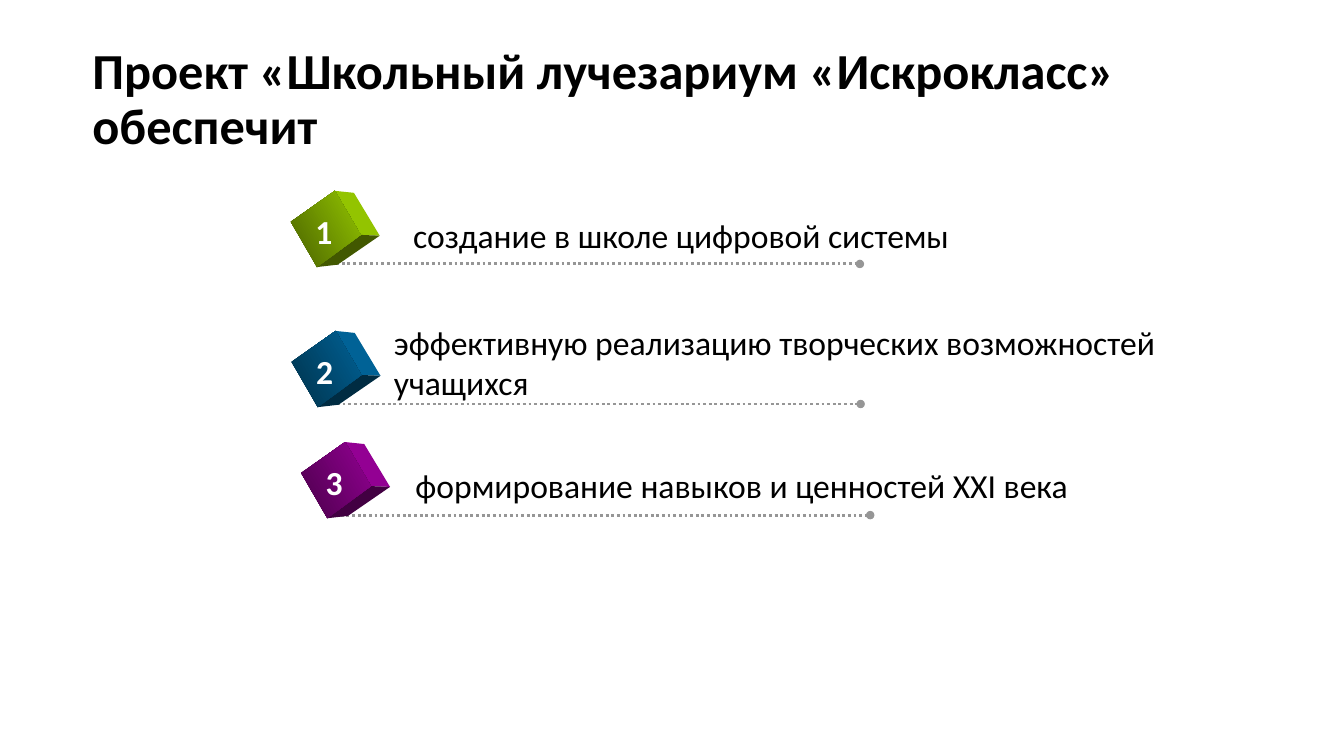
from lxml.etree import SubElement
from pptx import Presentation
from pptx.dml.color import RGBColor
from pptx.enum.dml import MSO_LINE
from pptx.enum.shapes import MSO_CONNECTOR
from pptx.enum.text import MSO_ANCHOR
from pptx.oxml.ns import qn
from pptx.util import Cm, Pt

COLORS = {
    "text": "000000",
    "number": "FFFFFF",
    "rule": "969696",
    "green": "93C400",
    "green dark": "4A6300",
    "green base": "425800",
    "blue": "006296",
    "blue dark": "00324B",
    "blue base": "002C42",
    "purple": "930093",
    "purple dark": "4A004A",
    "purple base": "420042",
}

# Cube corners in hundredths of a centimetre
LEFT, TOP, TOP_RIGHT, RIGHT = (0, 78), (111, 0), (159, 5), (224, 113)
BOTTOM_RIGHT, BOTTOM, INNER = (118, 186), (66, 192), (176, 111)
SIDE_FACE = (TOP, TOP_RIGHT, RIGHT, INNER)
BASE_FACE = (BOTTOM, INNER, RIGHT, BOTTOM_RIGHT)
FRONT_FACE = (LEFT, TOP, INNER, BOTTOM)

# Cube left and top, colour, caption, caption box relative to the cube, wrapping
GOALS = [
    (7.33, 4.81, "green", "создание в школе цифровой системы",
     (2.83, 0.47, 14.15, 1.3), False),
    (7.35, 8.34, "blue", "эффективную реализацию творческих возможностей учащихся",
     (2.33, -0.36, 19.69, 2.31), True),
    (7.59, 11.14, "purple", "формирование навыков и ценностей XXI века",
     (2.63, 0.44, 17.09, 1.3), False),
]


def rgb(name):
    return RGBColor.from_string(COLORS[name])


def add_text(page, text, box, size=24, color="text", bold=False, wrap=False, spacing=None):
    left, top, width, height = box
    frame = page.shapes.add_textbox(Cm(left), Cm(top), Cm(width), Cm(height)).text_frame
    frame.word_wrap = wrap
    frame.vertical_anchor = MSO_ANCHOR.TOP
    para = frame.paragraphs[0]
    para.line_spacing = spacing
    span = para.add_run()
    span.text = text
    span.font.name = "Calibri"
    span.font.size = Pt(size)
    span.font.bold = bold
    span.font.color.rgb = rgb(color)


def add_rule(page, left, top, width):
    """Dotted line that ends in a round dot."""
    rule = page.shapes.add_connector(
        MSO_CONNECTOR.STRAIGHT, Cm(left), Cm(top), Cm(left + width), Cm(top))
    rule.line.color.rgb = rgb("rule")
    rule.line.width = Pt(2)
    rule.line.dash_style = MSO_LINE.ROUND_DOT
    SubElement(rule.line._get_or_add_ln(), qn("a:tailEnd"), type="oval")
    SubElement(rule._element.spPr, qn("a:effectLst"))


def add_face(page, corners, left, top):
    builder = page.shapes.build_freeform(*corners[0], scale=Cm(0.01))
    builder.add_line_segments(corners[1:], close=True)
    face = builder.convert_to_shape(Cm(left), Cm(top))
    face.shadow.inherit = False
    face.line.fill.background()
    return face


def add_cube(page, left, top, color):
    for corners, shade in ((SIDE_FACE, color), (BASE_FACE, f"{color} base")):
        face = add_face(page, corners, left, top)
        face.fill.solid()
        face.fill.fore_color.rgb = rgb(shade)
    front = add_face(page, FRONT_FACE, left, top)
    front.fill.gradient()
    front.fill.gradient_angle = 30
    for stop, position, shade in zip(front.fill.gradient_stops, (0, 1), (f"{color} dark", color)):
        stop.position = position
        stop.color.rgb = rgb(shade)


def add_goal(page, number, left, top, color, caption, caption_box, wrap):
    add_rule(page, left + 1, top + 1.84, 13.34)
    add_cube(page, left, top, color)
    shift_x, shift_y, width, height = caption_box
    add_text(page, caption, (left + shift_x, top + shift_y, width, height), wrap=wrap)
    add_text(page, str(number), (left + 0.37, top + 0.37, 0.99, 1.27),
             color="number", bold=True)


def main():
    deck = Presentation()
    deck.slide_width, deck.slide_height = Cm(33.87), Cm(19.05)
    page = deck.slides.add_slide(deck.slide_layouts[6])
    add_text(page, "Проект «Школьный лучезариум «Искрокласс» обеспечит",
             (2.08, 1.04, 29.21, 12.09), size=36, bold=True, wrap=True, spacing=0.9)
    for number, goal in enumerate(GOALS, start=1):
        add_goal(page, number, *goal)
    deck.save("out.pptx")


if __name__ == "__main__":
    main()
